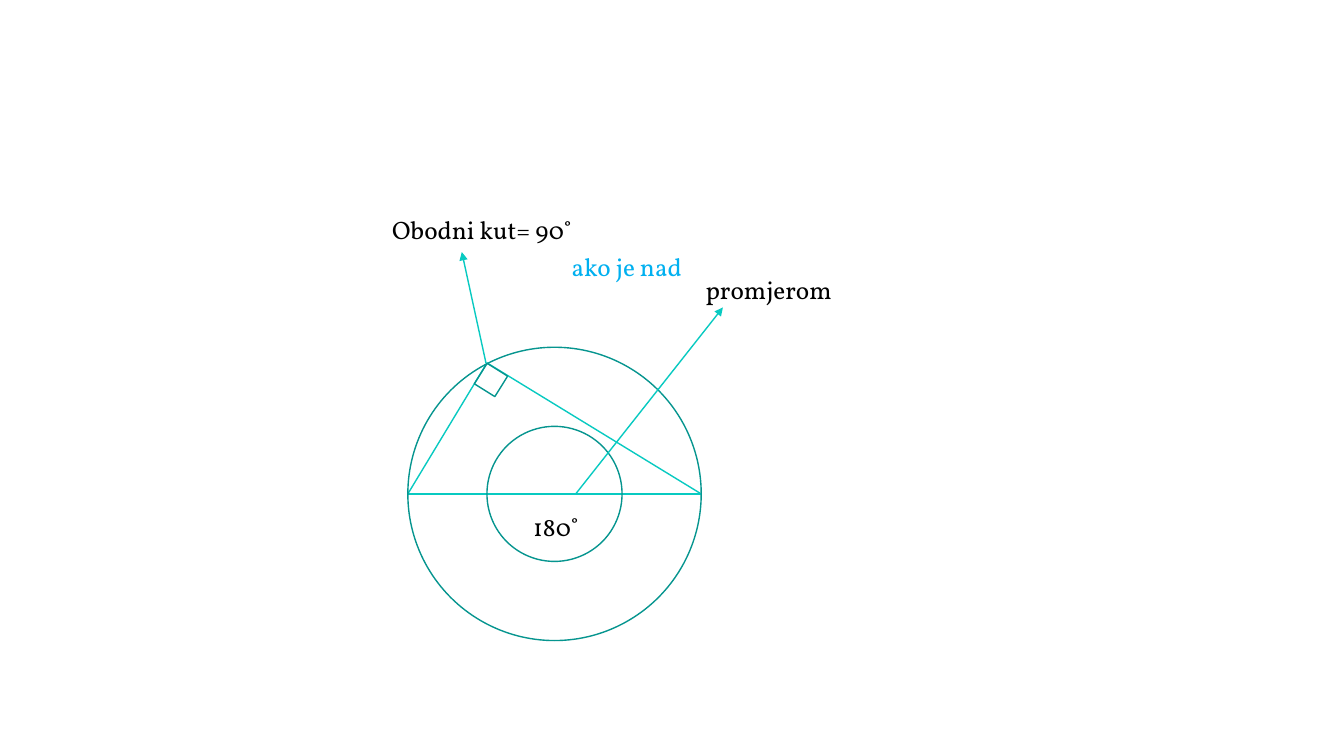
from lxml import etree
from pptx import Presentation
from pptx.dml.color import RGBColor
from pptx.enum.shapes import MSO_CONNECTOR, MSO_SHAPE
from pptx.enum.text import MSO_AUTO_SIZE
from pptx.oxml.ns import qn
from pptx.util import Inches, Pt

STRAIGHT = MSO_CONNECTOR.STRAIGHT
OVAL, RECT = MSO_SHAPE.OVAL, MSO_SHAPE.RECTANGLE
FIT = MSO_AUTO_SIZE.SHAPE_TO_FIT_TEXT

theme = {
    "font": "Vollkorn",
    "size": Pt(18),
    "text": RGBColor.from_string("000000"),
    "accent": RGBColor.from_string("00B0F0"),
    "chord": RGBColor.from_string("08CAC1"),
    "edge": RGBColor.from_string("06958F"),
    "width": Pt(1),
}

deck = Presentation()
deck.slide_width, deck.slide_height = Inches(13.33), Inches(7.5)
slide = deck.slides.add_slide(deck.slide_layouts[6])
shapes = slide.shapes


def draw_line(start, end, arrow=False):
    line = shapes.add_connector(STRAIGHT, *map(Inches, start + end))
    line.line.color.rgb = theme["chord"]
    line.line.width = theme["width"]
    if arrow:
        etree.SubElement(line.line._get_or_add_ln(), qn("a:tailEnd"), type="triangle")
    etree.SubElement(line._element.spPr, qn("a:effectLst"))


def draw_shape(kind, center, size, turn=0):
    x, y = center
    box = (x - size / 2, y - size / 2, size, size)
    shape = shapes.add_shape(kind, *map(Inches, box))
    shape.rotation = turn
    shape.shadow.inherit = False
    shape.fill.background()
    shape.line.color.rgb = theme["edge"]
    shape.line.width = theme["width"]


center = (5.5, 4.9)
radius = 1.455
left = (center[0] - radius, center[1])
right = (center[0] + radius, center[1])
apex = (4.83, 3.6)

for start, end in [(left, right), (left, apex), (right, apex)]:
    draw_line(start, end)

for size in (2 * radius, 1.34):
    draw_shape(OVAL, center, size)
draw_shape(RECT, (4.87, 3.77), 0.24, 32)

for start, end in [((4.82, 3.6), (4.58, 2.5)), ((5.71, 4.9), (7.17, 3.05))]:
    draw_line(start, end, arrow=True)

labels = [
    ("Obodni kut= 90˚", 3.79, 2.08, 2.99, "text"),
    ("180˚", 5.19, 5.02, 0.75, "text"),
    ("promjerom", 6.9, 2.67, 1.93, "text"),
    ("ako je nad", 5.57, 2.44, 1.72, "accent"),
]
for words, x, y, width, color in labels:
    frame = shapes.add_textbox(*map(Inches, (x, y, width, 0.4))).text_frame
    frame.word_wrap = True
    frame.auto_size = FIT
    run = frame.paragraphs[0].add_run()
    run.text = words
    for name, value in {"name": theme["font"], "size": theme["size"]}.items():
        setattr(run.font, name, value)
    run.font.color.rgb = theme[color]

deck.save("out.pptx")
